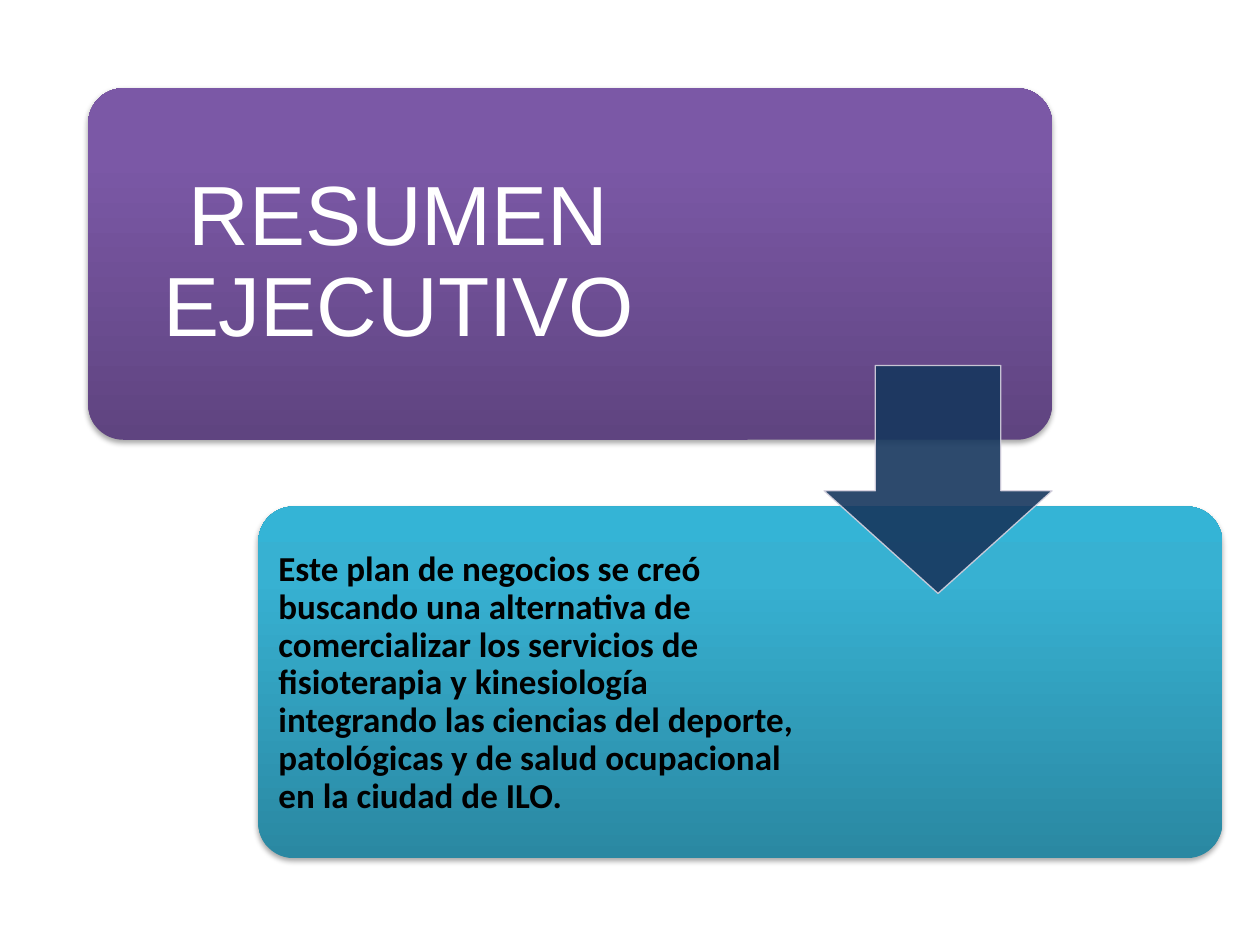
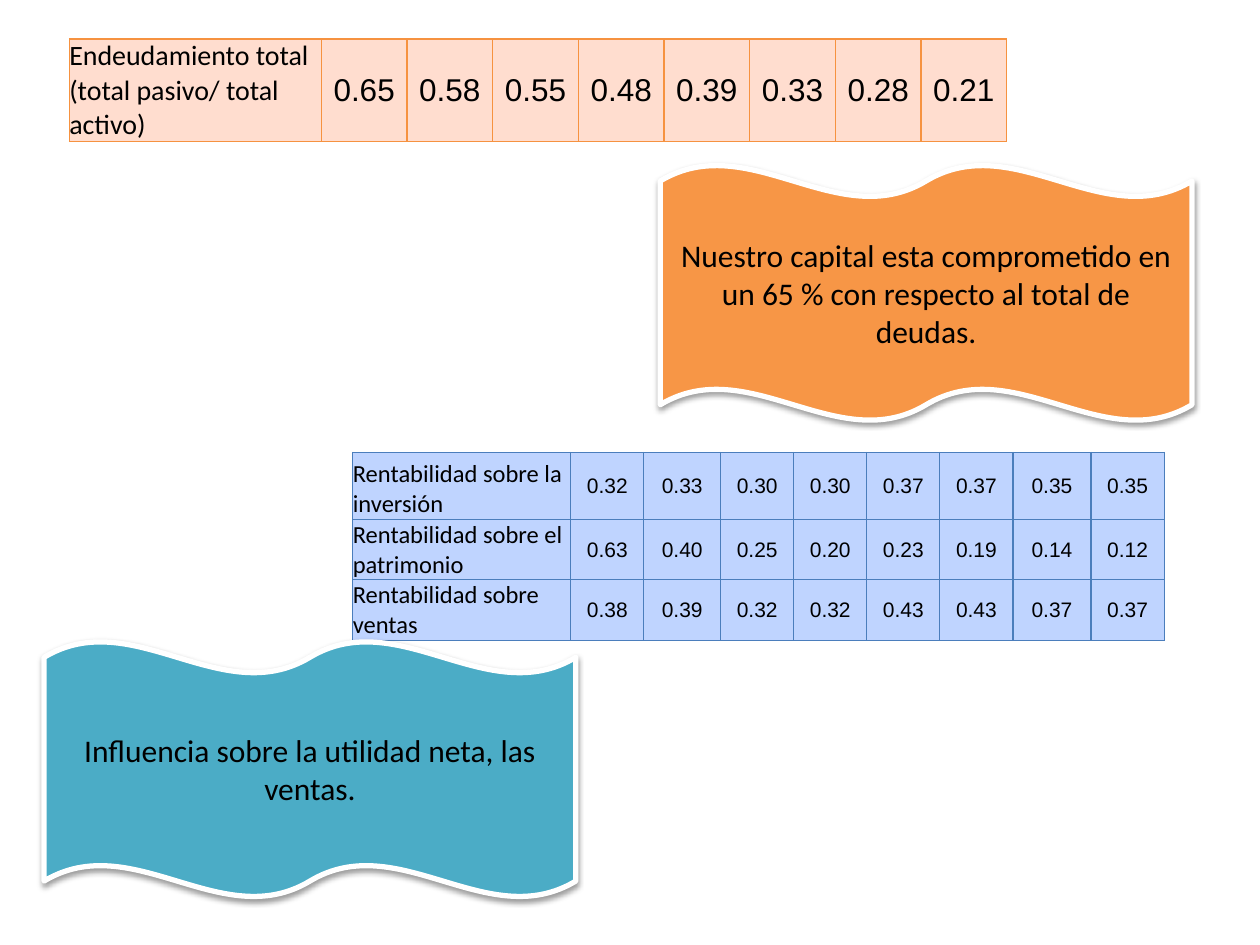
"""Builds two slides: the executive summary and the debt and return ratios."""
from lxml.etree import SubElement
from pptx import Presentation
from pptx.dml.color import RGBColor
from pptx.enum.shapes import MSO_SHAPE
from pptx.enum.text import MSO_ANCHOR, MSO_AUTO_SIZE, PP_ALIGN
from pptx.oxml import parse_xml
from pptx.oxml.ns import nsdecls, qn
from pptx.util import Inches, Pt

BLACK = RGBColor(0x00, 0x00, 0x00)
WHITE = RGBColor(0xFF, 0xFF, 0xFF)
NAVY = RGBColor(0x17, 0x37, 0x5E)
MIST = RGBColor(0xD8, 0xD3, 0xE0)
ORANGE = RGBColor(0xF7, 0x96, 0x46)
TEAL = RGBColor(0x4B, 0xAC, 0xC6)
PEACH = RGBColor(0xFF, 0xDD, 0xCF)
RUST = RGBColor(0xF6, 0x92, 0x40)
SKY = RGBColor(0xBF, 0xD4, 0xFF)
BLUE = RGBColor(0x4B, 0x7E, 0xBC)
PURPLES = [RGBColor(0x5F, 0x44, 0x80), RGBColor(0x7B, 0x58, 0xA6), RGBColor(0x7C, 0x57, 0xA8)]
AQUAS = [RGBColor(0x2A, 0x88, 0xA2), RGBColor(0x37, 0xB1, 0xD2), RGBColor(0x34, 0xB4, 0xD6)]


def write(spot, text, size, font="Calibri", color=BLACK, bold=False,
          align=PP_ALIGN.CENTER, anchor=MSO_ANCHOR.MIDDLE, pad=(0.1, 0.05, 0.1, 0.05), space=1.0):
    """Fill a text frame or a table cell with one formatted paragraph."""
    spot.margin_left, spot.margin_top, spot.margin_right, spot.margin_bottom = map(Inches, pad)
    spot.vertical_anchor = anchor
    frame = getattr(spot, "text_frame", spot)
    frame.word_wrap = True
    para = frame.paragraphs[0]
    para.alignment, para.line_spacing, para.space_before = align, space, Pt(0)
    run = para.add_run()
    run.text = text
    run.font.size, run.font.name, run.font.bold = Pt(size), font, bold
    run.font.color.rgb = color


def draw(slide, kind, box, shade=0, dist=0):
    """Add a bare shape with an optional soft shadow below it."""
    shape = slide.shapes.add_shape(kind, *map(Inches, box))
    shape.line.fill.background()
    shape.shadow.inherit = False
    if shade:
        effect = shape._element.spPr.find(qn("a:effectLst"))
        effect.append(parse_xml(
            f'<a:outerShdw {nsdecls("a")} blurRad="{Pt(3.1)}" dist="{Pt(dist)}" dir="5400000" '
            f'rotWithShape="0"><a:srgbClr val="000000"><a:alpha val="{shade * 1000}"/>'
            '</a:srgbClr></a:outerShdw>'))
    return shape


deck = Presentation()
deck.slide_width, deck.slide_height = Inches(10), Inches(7.5)

slide = deck.slides.add_slide(deck.slide_layouts[1])
title, body = slide.placeholders
panels = [
    (title, (0.7, 0.7), PURPLES, (0.78, 0.78, 4.77, 2.63), "RESUMEN EJECUTIVO",
     dict(size=48, font="Arial", color=WHITE, pad=[0.2] * 4)),
    (body, (2.05, 4.02), AQUAS, (2.13, 4.11, 4.32, 2.63),
     "Este plan de negocios se creó buscando una alternativa de comercializar los servicios de "
     "fisioterapia y kinesiología integrando las ciencias del deporte, patológicas y de salud "
     "ocupacional en la ciudad de ILO.",
     dict(size=20, bold=True, align=PP_ALIGN.LEFT, pad=[0.08] * 4)),
]
for holder, place, tones, box, text, style in panels:
    panel = draw(slide, MSO_SHAPE.ROUNDED_RECTANGLE, (*place, 7.65, 2.79), 35, 1.8)
    panel.adjustments[0] = 0.1
    stops = "".join(f'<a:gs pos="{pos * 1000}"><a:srgbClr val="{tone}"/></a:gs>'
                    for pos, tone in zip((0, 80, 100), tones))
    panel._element.spPr.find(qn("a:prstGeom")).addnext(parse_xml(
        f'<a:gradFill {nsdecls("a")} rotWithShape="1"><a:gsLst>{stops}</a:gsLst>'
        '<a:lin ang="16200000" scaled="0"/></a:gradFill>'))
    holder.left, holder.top, holder.width, holder.height = map(Inches, box)
    panel._element.addnext(holder._element)
    frame = holder.text_frame
    frame.auto_size = MSO_AUTO_SIZE.NONE
    props = frame.paragraphs[0]._p.get_or_add_pPr()
    props.set("marL", "0")
    props.set("indent", "0")
    SubElement(props, qn("a:buNone"))
    write(frame, text, space=0.9, **style)

arrow = draw(slide, MSO_SHAPE.DOWN_ARROW, (6.54, 2.9, 1.81, 1.81))
arrow.adjustments[0], arrow.adjustments[1] = 0.55, 0.45
arrow.fill.solid()
arrow.fill.fore_color.rgb = NAVY
arrow.line.color.rgb = MIST
arrow.line.width = Pt(0.75)
for tint in arrow._element.spPr.iter(qn("a:srgbClr")):
    SubElement(tint, qn("a:alpha"), val="90000")

slide = deck.slides.add_slide(deck.slide_layouts[6])
grids = [
    ((0.55, 0.31), [2] + [0.68] * 8, [0.8], PEACH, RUST, 16, 18, MSO_ANCHOR.MIDDLE,
     [("Endeudamiento total (total pasivo/ total activo)", "0.65 0.58 0.55 0.48 0.39 0.33 0.28 0.21")]),
    ((2.8, 3.59), [1.73, 0.58, 0.61, 0.58, 0.58, 0.58, 0.58, 0.62, 0.58], [0.53, 0.48, 0.48],
     SKY, BLUE, 14, 12, MSO_ANCHOR.BOTTOM,
     [("Rentabilidad sobre la inversión", "0.32 0.33 0.30 0.30 0.37 0.37 0.35 0.35"),
      ("Rentabilidad sobre el patrimonio", "0.63 0.40 0.25 0.20 0.23 0.19 0.14 0.12"),
      ("Rentabilidad sobre ventas", "0.38 0.39 0.32 0.32 0.43 0.43 0.37 0.37")]),
]
waves = [
    ((5.24, 1.31), ORANGE,
     "Nuestro capital esta comprometido en un 65 % con respecto al total de deudas."),
    ((0.35, 5.09), TEAL, "Influencia sobre la utilidad neta, las ventas."),
]
for grid, (place, color, note) in zip(grids, waves):
    spot, cols, rows, fill, edge, big, small, anchor, data = grid
    size = sum(cols), sum(rows)
    table = slide.shapes.add_table(len(rows), len(cols), *map(Inches, (*spot, *size))).table
    table.first_row = table.horz_banding = False
    for col, width in zip(table.columns, cols):
        col.width = Inches(width)
    for row, height, (label, values) in zip(table.rows, rows, data):
        row.height = Inches(height)
        for i, (cell, text) in enumerate(zip(row.cells, [label, *values.split()])):
            if i == 0:
                write(cell, text, big, align=PP_ALIGN.LEFT, anchor=anchor, pad=[0] * 4)
            else:
                write(cell, text, small, font="Arial", pad=(0.01, 0.01, 0.01, 0))
            props = cell._tc.get_or_add_tcPr()
            for side in ("lnL", "lnR", "lnT", "lnB"):
                props.append(parse_xml(
                    f'<a:{side} {nsdecls("a")} w="{Pt(0.75)}"><a:solidFill>'
                    f'<a:srgbClr val="{edge}"/></a:solidFill></a:{side}>'))
            cell.fill.solid()
            cell.fill.fore_color.rgb = fill

    wave = draw(slide, MSO_SHAPE.DOUBLE_WAVE, (*place, 4.22, 2.03), 38, 1.6)
    wave.fill.solid()
    wave.fill.fore_color.rgb = color
    wave.line.color.rgb = WHITE
    wave.line.width = Pt(3)
    write(wave.text_frame, note, 18)

deck.save("out.pptx")
